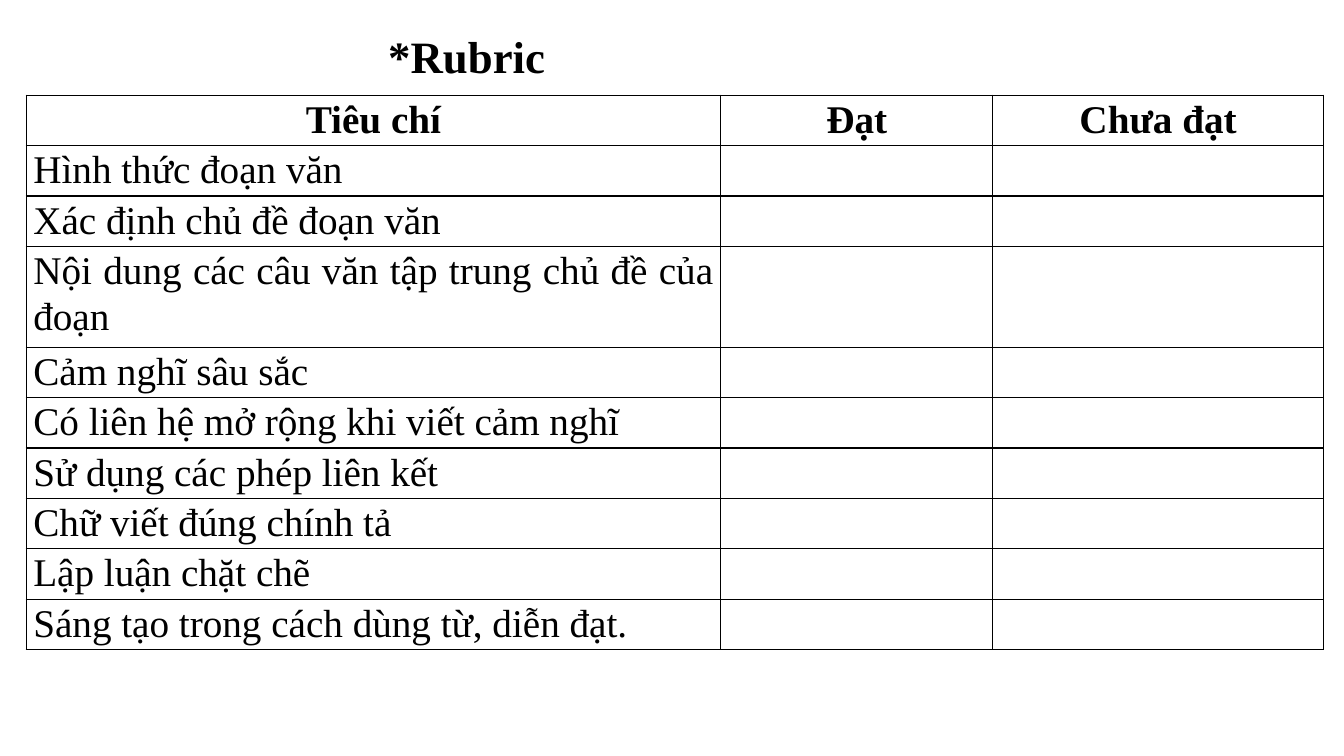
from lxml.etree import SubElement
from pptx import Presentation
from pptx.dml.color import RGBColor
from pptx.enum.text import MSO_ANCHOR as Anchor, MSO_AUTO_SIZE as AutoSize, PP_ALIGN as Align
from pptx.oxml.ns import qn
from pptx.util import Cm, Pt

CRITERIA = [
    "Hình thức đoạn văn",
    "Xác định chủ đề đoạn văn",
    "Nội dung các câu văn tập trung chủ đề của đoạn",
    "Cảm nghĩ sâu sắc",
    "Có liên hệ mở rộng khi viết cảm nghĩ",
    "Sử dụng các phép liên kết",
    "Chữ viết đúng chính tả",
    "Lập luận chặt chẽ",
    "Sáng tạo trong cách dùng từ, diễn đạt.",
]
HEADINGS = ["Tiêu chí", "Đạt", "Chưa đạt"]
COLUMN_WIDTHS = [17.5, 6.86, 8.33]
ROW_HEIGHT = 1.27
TWO_LINE_ROW = 3


def color(value):
    return RGBColor.from_string(value)


class RubricSlide:
    """Holds the style and the slide on which the rubric is built."""

    font_name = "Times New Roman"
    ink = "000000"
    paper = "FFFFFF"

    def __init__(self, presentation):
        self.slide = presentation.slides.add_slide(presentation.slide_layouts[5])

    def set_text(self, paragraph, text, size, bold, align):
        paragraph.text = text
        paragraph.alignment = align
        paragraph.line_spacing = 1.07
        paragraph.space_before = Pt(0)
        paragraph.space_after = Pt(8)
        font = paragraph.font
        font.name, font.size, font.bold = self.font_name, Pt(size), bold
        font.color.rgb = color(self.ink)

    def title(self, text, left, top, width, height):
        shape = self.slide.shapes.title
        shape.left, shape.top = Cm(left), Cm(top)
        shape.width, shape.height = Cm(width), Cm(height)
        frame = shape.text_frame
        frame.auto_size = AutoSize.NONE
        frame.vertical_anchor = Anchor.TOP
        self.set_text(frame.paragraphs[0], text, 32, True, Align.JUSTIFY)

    def cell(self, cell, text, heading):
        properties = cell._tc.get_or_add_tcPr()
        for side in ("a:lnL", "a:lnR", "a:lnT", "a:lnB"):
            line = SubElement(properties, qn(side), w=str(Pt(1)))
            fill = SubElement(line, qn("a:solidFill"))
            SubElement(fill, qn("a:srgbClr"), val=self.ink)
        cell.fill.solid()
        cell.fill.fore_color.rgb = color(self.paper)
        if text:
            cell.margin_left = cell.margin_right = Cm(0.18)
            cell.margin_top = cell.margin_bottom = 0
            align = Align.CENTER if heading else Align.JUSTIFY
            self.set_text(cell.text_frame.paragraphs[0], text, 28, heading, align)

    def table(self, rows, left, top):
        heights = [ROW_HEIGHT] * len(rows)
        heights[TWO_LINE_ROW] *= 2
        table = self.slide.shapes.add_table(
            len(rows), len(COLUMN_WIDTHS), Cm(left), Cm(top),
            Cm(sum(COLUMN_WIDTHS)), Cm(sum(heights))).table
        table.first_row = table.horz_banding = False
        for column, width in zip(table.columns, COLUMN_WIDTHS):
            column.width = Cm(width)
        for index, (texts, height) in enumerate(zip(rows, heights)):
            table.rows[index].height = Cm(height)
            for cell, text in zip(table.rows[index].cells, texts):
                self.cell(cell, text, index == 0)


def main():
    presentation = Presentation()
    presentation.slide_width, presentation.slide_height = Cm(33.87), Cm(19.05)
    rubric = RubricSlide(presentation)
    rubric.title("*Rubric", 9.53, 0.5, 8.33, 1.65)
    rubric.table([HEADINGS] + [[criterion, "", ""] for criterion in CRITERIA], 0.66, 2.4)
    presentation.save("out.pptx")


if __name__ == "__main__":
    main()
